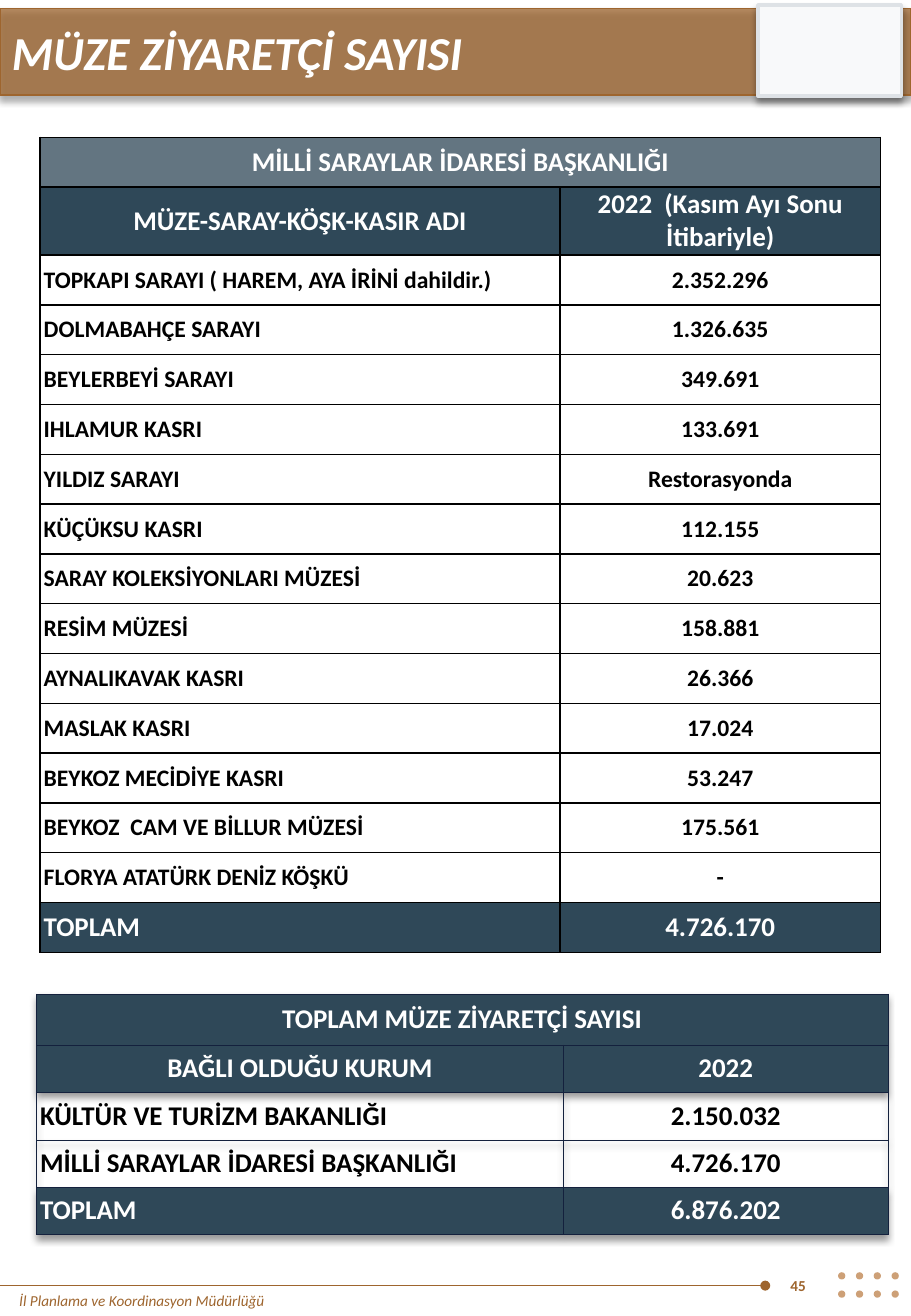
from dataclasses import dataclass

from lxml.etree import SubElement
from pptx import Presentation
from pptx.dml.color import RGBColor
from pptx.enum.shapes import MSO_CONNECTOR, MSO_SHAPE
from pptx.enum.text import MSO_ANCHOR, PP_ALIGN
from pptx.oxml import parse_xml
from pptx.oxml.ns import nsdecls, qn
from pptx.util import Inches, Pt


@dataclass(frozen=True)
class Theme:
    font: str = "Calibri"
    brown: str = "9E652E"
    tan: str = "CDA077"
    slate: str = "2F4858"
    navy: str = "14213D"
    black: str = "000000"
    white: str = "FFFFFF"
    panel: str = "F8F9FA"
    panel_edge: str = "DEE2E6"
    title: float = 28
    heading: float = 16
    body: float = 14
    small: float = 9


THEME = Theme()


@dataclass(frozen=True)
class Panel:
    left: float
    top: float
    width: float
    height: float
    fill: str
    line: str
    line_pt: float
    opacity: int = 100


@dataclass(frozen=True)
class Label:
    text: str
    left: float
    top: float
    width: float
    height: float
    size: float
    color: str
    bold: bool = False
    italic: bool = False
    anchor: MSO_ANCHOR = MSO_ANCHOR.TOP


@dataclass(frozen=True)
class VisitorTable:
    """Rows are a merged title, a header, the body and a total, in that order."""
    left: float
    top: float
    col_widths: tuple[float, float]
    row_heights: tuple[float, ...]
    rows: tuple[tuple[str, str], ...]
    body_size: float
    border: str
    border_pt: float
    title_opacity: int = 100
    shadow: bool = False


PANELS = (
    Panel(0, 0.07, 7.5, 0.71, THEME.brown, THEME.brown, 1, opacity=75),
    Panel(6.24, 0.04, 1.18, 0.75, THEME.panel, THEME.panel_edge, 2),
)

LABELS = (
    Label("MÜZE ZİYARETÇİ SAYISI", 0, 0.14, 7.5, 0.57, THEME.title, THEME.white,
          bold=True, italic=True),
    Label("İl Planlama ve Koordinasyon Müdürlüğü", 0.06, 10.58, 4.69, 0.25,
          THEME.small, THEME.brown, italic=True),
    Label("45", 6.41, 10.37, 0.5, 0.42, THEME.small, THEME.brown, bold=True,
          anchor=MSO_ANCHOR.MIDDLE),
)

PALACES = VisitorTable(
    0.33, 1.13, (4.28, 2.64), (0.41, 0.56) + (0.41,) * 14,
    (
        ("MİLLİ SARAYLAR İDARESİ BAŞKANLIĞI", ""),
        ("MÜZE-SARAY-KÖŞK-KASIR ADI", "2022  (Kasım Ayı Sonu İtibariyle)"),
        ("TOPKAPI SARAYI ( HAREM, AYA İRİNİ dahildir.)", "2.352.296"),
        ("DOLMABAHÇE SARAYI", "1.326.635"),
        ("BEYLERBEYİ SARAYI", "349.691"),
        ("IHLAMUR KASRI", "133.691"),
        ("YILDIZ SARAYI", "Restorasyonda"),
        ("KÜÇÜKSU KASRI", "112.155"),
        ("SARAY KOLEKSİYONLARI MÜZESİ", "20.623"),
        ("RESİM MÜZESİ", "158.881"),
        ("AYNALIKAVAK KASRI", "26.366"),
        ("MASLAK KASRI", "17.024"),
        ("BEYKOZ MECİDİYE KASRI", "53.247"),
        ("BEYKOZ  CAM VE BİLLUR MÜZESİ", "175.561"),
        ("FLORYA ATATÜRK DENİZ KÖŞKÜ", "-"),
        ("TOPLAM", "4.726.170"),
    ),
    THEME.body, THEME.black, 1, title_opacity=75,
)

TOTALS = VisitorTable(
    0.3, 8.18, (4.34, 2.67), (0.42,) + (0.39,) * 4,
    (
        ("TOPLAM MÜZE ZİYARETÇİ SAYISI", ""),
        ("BAĞLI OLDUĞU KURUM", "2022"),
        ("KÜLTÜR VE TURİZM BAKANLIĞI", "2.150.032"),
        ("MİLLİ SARAYLAR İDARESİ BAŞKANLIĞI", "4.726.170"),
        ("TOPLAM", "6.876.202"),
    ),
    THEME.heading, THEME.navy, 0.25, shadow=True,
)


def shadow_effect():
    return parse_xml(
        f'<a:effectLst {nsdecls("a")}><a:outerShdw blurRad="{Pt(4)}" dist="{Pt(3)}" '
        f'dir="5400000" algn="t" rotWithShape="0"><a:srgbClr val="{THEME.black}">'
        '<a:alpha val="40000"/></a:srgbClr></a:outerShdw></a:effectLst>')


def set_fill(fill, color: str, opacity: int = 100) -> None:
    fill.solid()
    fill.fore_color.rgb = RGBColor.from_string(color)
    if opacity < 100:
        clr = fill._xPr.find(qn("a:solidFill"))[0]
        SubElement(clr, qn("a:alpha")).set("val", str(opacity * 1000))


def add_run(p, text: str, size: float, color: str, bold: bool, italic: bool = False) -> None:
    r = p.add_run()
    r.text = text
    f = r.font
    f.name, f.size, f.bold, f.italic = THEME.font, Pt(size), bold, italic
    f.color.rgb = RGBColor.from_string(color)


def add_panel(s, panel: Panel) -> None:
    sp = s.shapes.add_shape(MSO_SHAPE.RECTANGLE, Inches(panel.left), Inches(panel.top),
                            Inches(panel.width), Inches(panel.height))
    set_fill(sp.fill, panel.fill, panel.opacity)
    set_fill(sp.line.fill, panel.line)
    sp.line.width = Pt(panel.line_pt)
    sp._element.spPr.append(shadow_effect())


def add_label(s, label: Label) -> None:
    tf = s.shapes.add_textbox(Inches(label.left), Inches(label.top),
                              Inches(label.width), Inches(label.height)).text_frame
    tf.word_wrap = True
    tf.vertical_anchor = label.anchor
    add_run(tf.paragraphs[0], label.text, label.size, label.color, label.bold, label.italic)


def set_borders(cell, color: str, width: float) -> None:
    tc_pr = cell._tc.get_or_add_tcPr()
    for i, side in enumerate(("lnL", "lnR", "lnT", "lnB")):
        tc_pr.insert(i, parse_xml(
            f'<a:{side} {nsdecls("a")} w="{Pt(width)}"><a:solidFill>'
            f'<a:srgbClr val="{color}"/></a:solidFill></a:{side}>'))


def add_visitor_table(s, spec: VisitorTable) -> None:
    last = len(spec.rows) - 1
    table = s.shapes.add_table(
        len(spec.rows), 2, Inches(spec.left), Inches(spec.top),
        Inches(sum(spec.col_widths)), Inches(sum(spec.row_heights))).table
    table.first_row = table.horz_banding = False
    if spec.shadow:
        table._tbl.tblPr.insert(0, shadow_effect())
    for column, width in zip(table.columns, spec.col_widths):
        column.width = Inches(width)
    for i, (row, height, texts) in enumerate(zip(table.rows, spec.row_heights, spec.rows)):
        row.height = Inches(height)
        dark = i in (0, 1, last)
        for j, (cell, text) in enumerate(zip(row.cells, texts)):
            cell.margin_left = cell.margin_right = Inches(0.03)
            cell.margin_top = cell.margin_bottom = 0
            cell.vertical_anchor = MSO_ANCHOR.MIDDLE
            if dark:
                set_fill(cell.fill, THEME.slate, spec.title_opacity if i == 0 else 100)
            else:
                cell.fill.background()
            set_borders(cell, spec.border, spec.border_pt)
            if text:
                p = cell.text_frame.paragraphs[0]
                p.alignment = PP_ALIGN.CENTER if j or i < 2 else PP_ALIGN.LEFT
                add_run(p, text, THEME.heading if dark else spec.body_size,
                        THEME.white if dark else THEME.black, bold=True)
    table.cell(0, 0).merge(table.cell(0, 1))


def add_footer_marks(s) -> None:
    """Draw the rule with its round end and the four by two grid of dots."""
    rule = s.shapes.add_connector(MSO_CONNECTOR.STRAIGHT, Inches(6.3), Inches(10.58),
                                  0, Inches(10.58))
    set_fill(rule.line.fill, THEME.brown)
    rule.line.width = Pt(0.5)
    SubElement(rule.line._get_or_add_ln(), qn("a:headEnd")).set("type", "oval")
    SubElement(rule._element.spPr, qn("a:effectLst"))
    for i in range(8):
        row, col = divmod(i, 4)
        dot = s.shapes.add_shape(MSO_SHAPE.OVAL, Inches(6.9 + col * 0.44 / 3),
                                 Inches(10.47 + row * 0.15), Inches(0.06), Inches(0.06))
        set_fill(dot.fill, THEME.tan)
        dot.line.fill.background()
        dot.shadow.inherit = False


def main() -> None:
    prs = Presentation()
    prs.slide_width, prs.slide_height = Inches(7.5), Inches(10.83)
    s = prs.slides.add_slide(prs.slide_layouts[6])
    for panel in PANELS:
        add_panel(s, panel)
    add_footer_marks(s)
    for table in (PALACES, TOTALS):
        add_visitor_table(s, table)
    for label in LABELS:
        add_label(s, label)
    prs.save("out.pptx")


if __name__ == "__main__":
    main()
